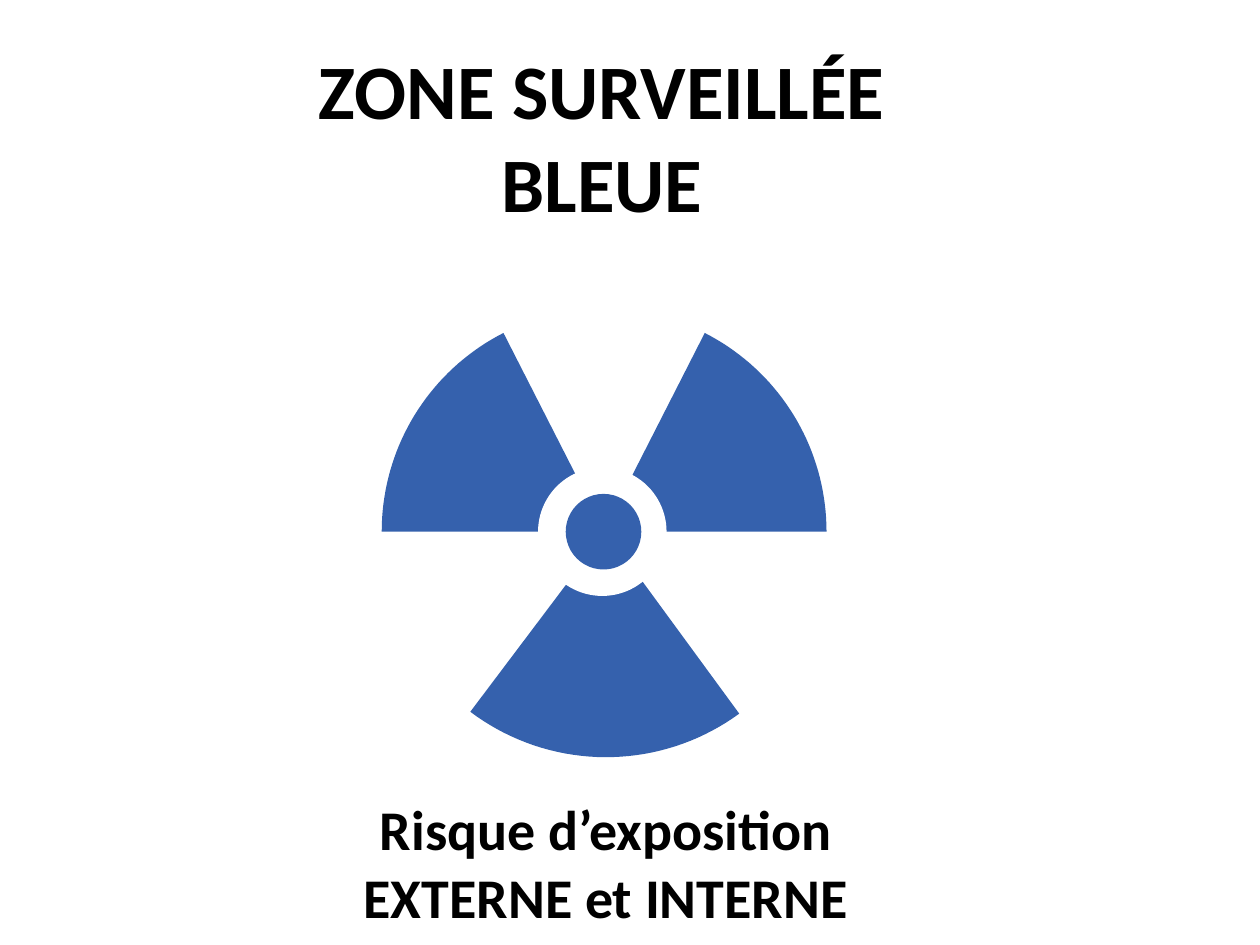
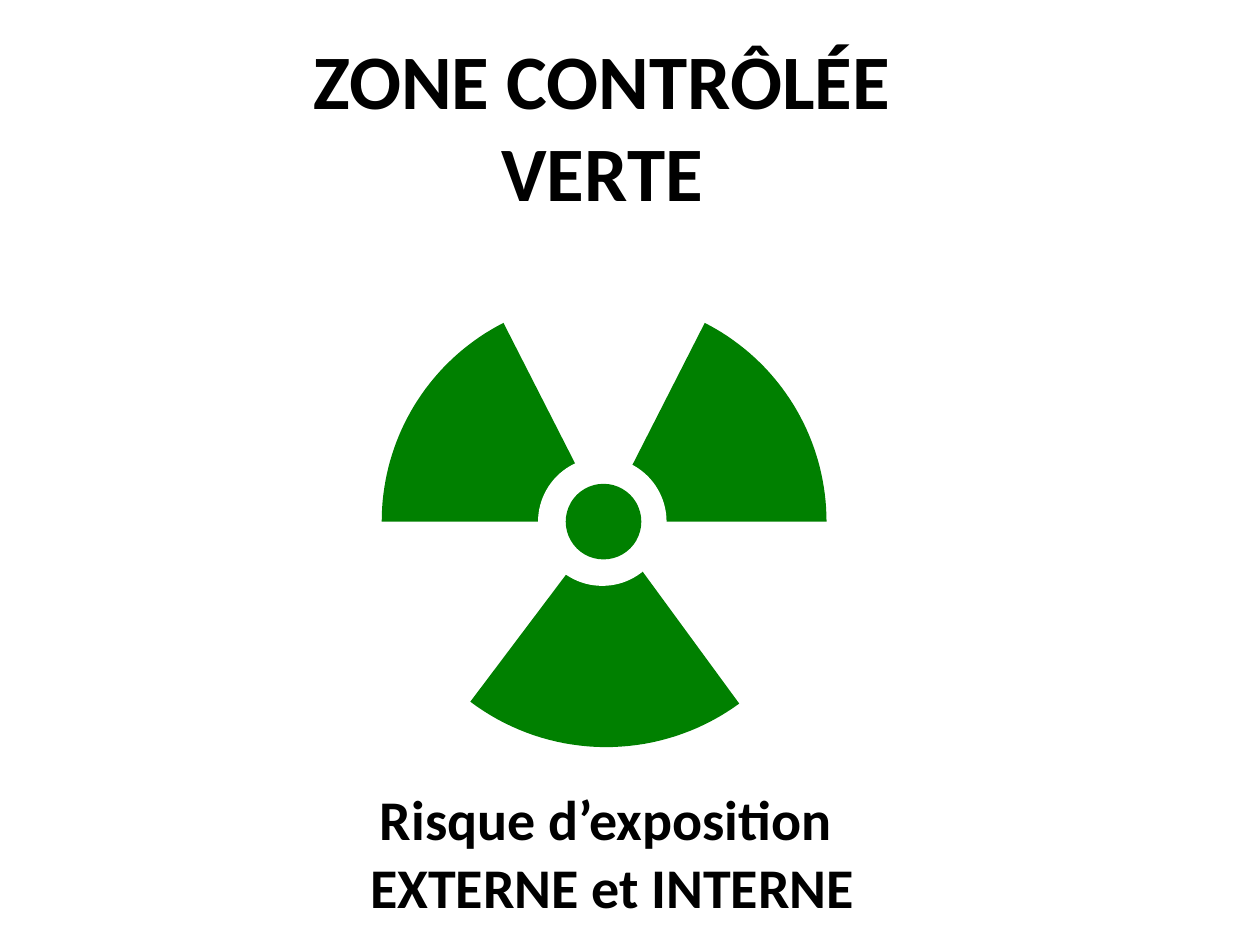
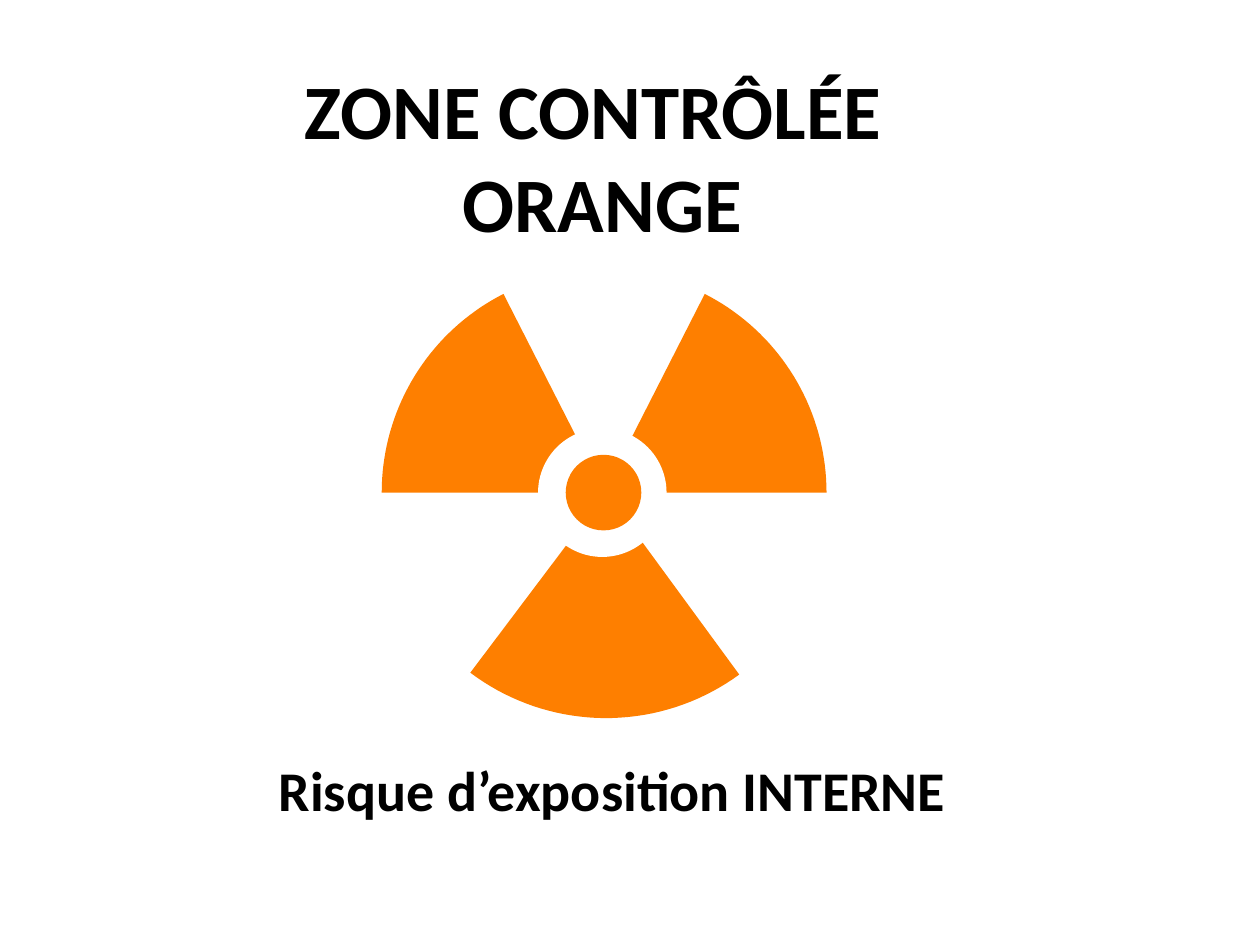
from math import cos, radians, sin

from pptx import Presentation
from pptx.dml.color import RGBColor
from pptx.enum.shapes import MSO_SHAPE
from pptx.enum.text import MSO_AUTO_SIZE, PP_ALIGN
from pptx.util import Inches, Pt

BLUE = RGBColor(0x35, 0x61, 0xAD)
GREEN = RGBColor(0x00, 0x80, 0x00)
ORANGE = RGBColor(0xFE, 0x7F, 0x00)
WHITE = RGBColor(0xFF, 0xFF, 0xFF)
BLACK = RGBColor(0x00, 0x00, 0x00)
OVAL = MSO_SHAPE.OVAL
CENTER = PP_ALIGN.CENTER
FIT_SHAPE = MSO_AUTO_SIZE.SHAPE_TO_FIT_TEXT

FONT = "Calibri"
ARC_STEPS = 36
# Blades: hub x, radius, start and end angle (clockwise from the right)
BLADES = [
    (4.8, 1.77, 180, 243),
    (4.81, 1.79, 53.8, 127),
    (4.79, 1.77, 297, 360),
]


def write(tf, text, size=32, color=BLACK, bold=True, align=CENTER):
    """Fill a text frame, one paragraph for each line."""
    for i, line in enumerate(text.split("\n")):
        p = tf.paragraphs[0] if i == 0 else tf.add_paragraph()
        p.alignment = align
        r = p.add_run()
        r.text = line
        r.font.name = FONT
        r.font.size = Pt(size)
        r.font.bold = bold
        r.font.color.rgb = color


class ZoneSign:
    def __init__(self, prs, color):
        self.color = color
        self.s = prs.slides.add_slide(prs.slide_layouts[6])

    def paint(self, sp, color):
        sp.shadow.inherit = False
        sp.fill.solid()
        sp.fill.fore_color.rgb = color
        sp.line.fill.background()

    def blade(self, shapes, x, y, radius, start, end):
        angles = [radians(start + (end - start) * i / ARC_STEPS)
                  for i in range(ARC_STEPS + 1)]
        arc = [(Inches(x + radius * cos(a)), Inches(y + radius * sin(a)))
               for a in angles]
        builder = shapes.build_freeform(Inches(x), Inches(y))
        builder.add_line_segments(arc, close=True)
        self.paint(builder.convert_to_shape(), self.color)

    def disc(self, shapes, x, y, diameter, color):
        left, top = x - diameter / 2, y - diameter / 2
        sp = shapes.add_shape(OVAL, Inches(left), Inches(top),
                              Inches(diameter), Inches(diameter))
        self.paint(sp, color)

    def trefoil(self, y):
        shapes = self.s.shapes.add_group_shape().shapes
        for x, radius, start, end in BLADES:
            self.blade(shapes, x, y, radius, start, end)
        self.disc(shapes, 4.78, y, 1.02, WHITE)
        self.disc(shapes, 4.79, y, 0.6, self.color)

    def text(self, text, left, top, width, height, wrap=True, **style):
        sp = self.s.shapes.add_textbox(Inches(left), Inches(top),
                                       Inches(width), Inches(height))
        tf = sp.text_frame
        tf.word_wrap = wrap
        tf.auto_size = FIT_SHAPE
        write(tf, text, **style)


# Colour, hub height, then title and risk texts with their boxes
ZONES = [
    (BLUE, 4.22,
     "ZONE SURVEILLÉE\nBLEUE", (1.38, 0.29, 6.8, 1.58),
     "Risque d’exposition \nEXTERNE et INTERNE ", (2.77, 6.26, 4.18, 1.18)),
    (GREEN, 4.14,
     "ZONE CONTRÔLÉE\nVERTE", (1.38, 0.21, 6.8, 1.58),
     "Risque d’exposition \nEXTERNE et INTERNE", (2.82, 6.18, 4.08, 1.18)),
    (ORANGE, 3.91,
     "ZONE CONTRÔLÉE \nORANGE", (1.16, 0.45, 7.24, 1.58),
     "Risque d’exposition INTERNE", (2.07, 5.95, 5.58, 0.64)),
]


def main():
    prs = Presentation()
    prs.slide_width = Inches(10)
    prs.slide_height = Inches(7.5)
    for color, hub_y, title, title_box, risk, risk_box in ZONES:
        sign = ZoneSign(prs, color)
        sign.trefoil(hub_y)
        sign.text(title, *title_box, size=44)
        sign.text(risk, *risk_box, wrap=False)
    prs.save("out.pptx")


if __name__ == "__main__":
    main()
